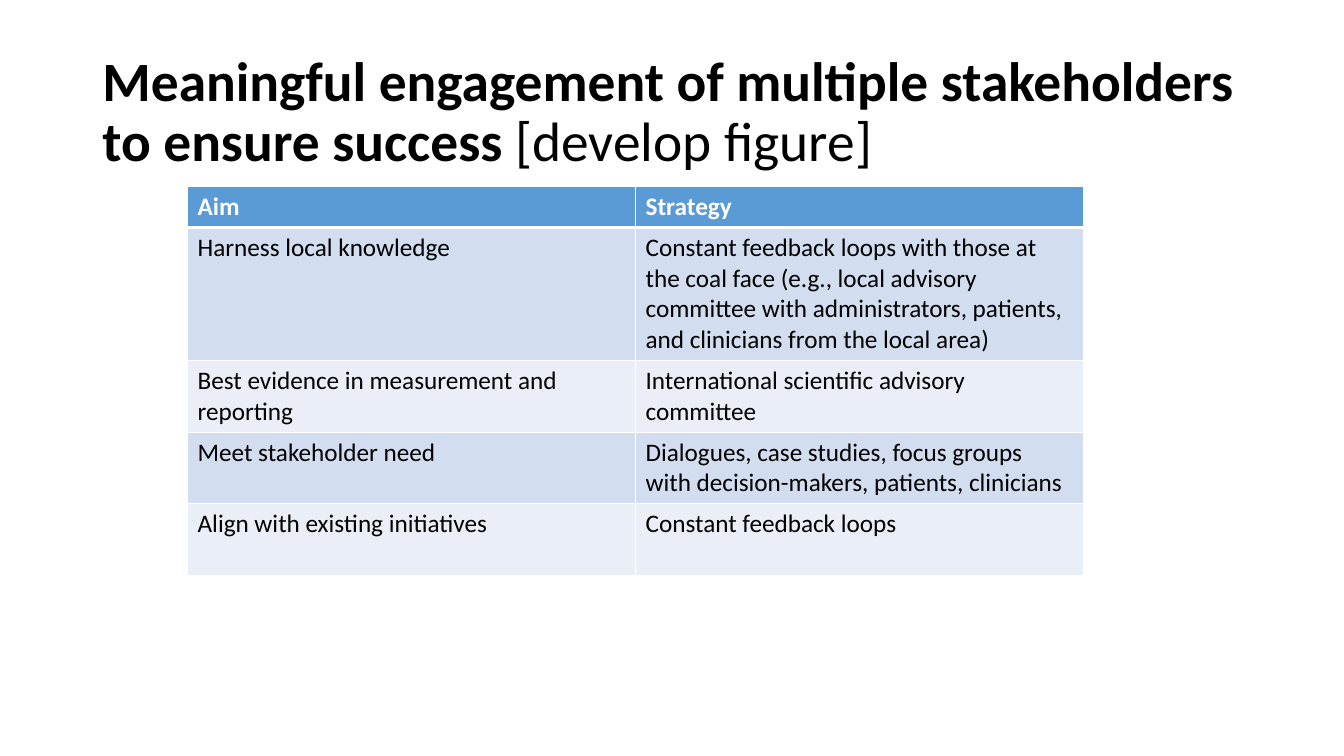
from lxml import etree
from pptx import Presentation
from pptx import util as u
from pptx.dml.color import RGBColor
from pptx.enum import text
from pptx.oxml import ns

COLOURS = {
    "text": "000000",
    "white": "FFFFFF",
    "header": "5B9BD5",
    "odd row": "D2DEEF",
    "even row": "EAEFF7",
}


def add_span(para, words, size, bold=False, colour="text"):
    span = para.add_run()
    span.text = words
    span.font.name = "Calibri"
    span.font.size = u.Pt(size)
    span.font.bold = bold
    span.font.color.rgb = RGBColor.from_string(COLOURS[colour])


def add_border(cell, side, width):
    """Draw a white line on one side (L, R, T or B) of a cell; call before filling it."""
    line = etree.SubElement(cell._tc.get_or_add_tcPr(), ns.qn(f"a:ln{side}"), w=str(u.Pt(width)))
    fill = etree.SubElement(line, ns.qn("a:solidFill"))
    etree.SubElement(fill, ns.qn("a:srgbClr"), val=COLOURS["white"])


deck = Presentation()
deck.slide_width, deck.slide_height = u.Pt(960), u.Pt(540)
page = deck.slides.add_slide(deck.slide_layouts[5])

# Title
title = page.shapes.title
title.left, title.top, title.width, title.height = u.Pt(66), u.Pt(28.75), u.Pt(828), u.Pt(104.4)
frame = title.text_frame
frame.word_wrap = True
frame.auto_size = text.MSO_AUTO_SIZE.NONE
frame.vertical_anchor = text.MSO_ANCHOR.MIDDLE
para = frame.paragraphs[0]
para.alignment = text.PP_ALIGN.LEFT
para.line_spacing = 0.9
add_span(para, "Meaningful engagement of multiple stakeholders to ensure success ", 39.6, bold=True)
add_span(para, "[develop figure]", 39.6)

# Table of aims and strategies
rows = [
    ("Aim", "Strategy"),
    ("Harness local knowledge",
     "Constant feedback loops with those at the coal face (e.g., local advisory committee "
     "with administrators, patients, and clinicians from the local area)"),
    ("Best evidence in measurement and reporting", "International scientific advisory committee"),
    ("Meet stakeholder need",
     "Dialogues, case studies, focus groups with decision-makers, patients, clinicians"),
    ("Align with existing initiatives", "Constant feedback loops"),
]
heights = [28.8, 95, 51, 51, 51]
table = page.shapes.add_table(
    len(rows), 2, u.Pt(134), u.Pt(133.2), u.Pt(640), u.Pt(sum(heights))).table
for column in table.columns:
    column.width = u.Pt(320)

for index, (words, height) in enumerate(zip(rows, heights)):
    table.rows[index].height = u.Pt(height)
    is_header = index == 0
    fill_name = "header" if is_header else "odd row" if index % 2 else "even row"
    borders = {"L": 1, "R": 1, "T": 3 if index == 1 else 1, "B": 3 if is_header else 1}
    for cell, cell_words in zip(table.rows[index].cells, words):
        for side, width in borders.items():
            add_border(cell, side, width)
        cell.fill.solid()
        cell.fill.fore_color.rgb = RGBColor.from_string(COLOURS[fill_name])
        add_span(cell.text_frame.paragraphs[0], cell_words, 18, bold=is_header,
                 colour="white" if is_header else "text")

deck.save("out.pptx")
